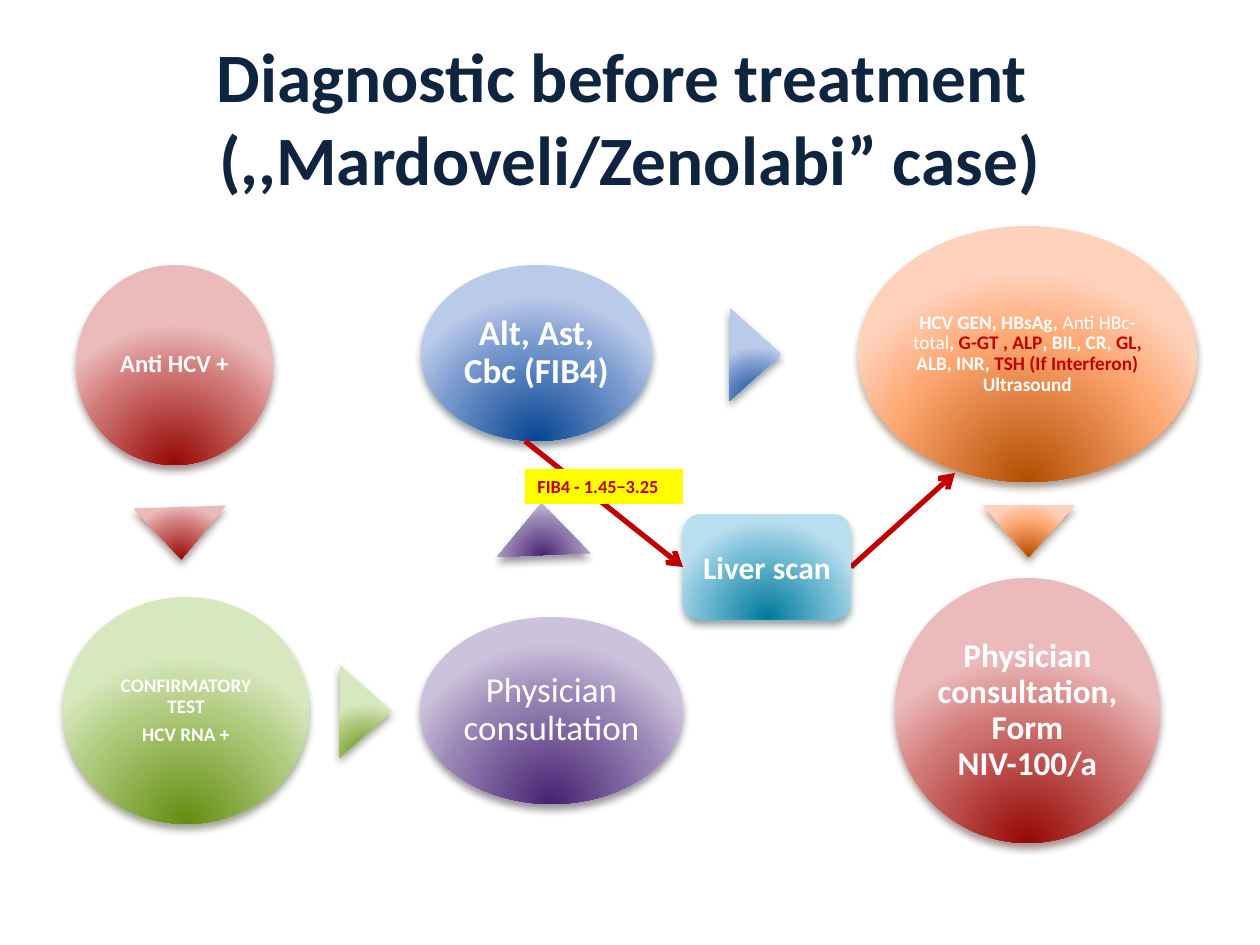
"""Build the slide showing the diagnostic pathway before treatment."""
from lxml.etree import SubElement
from pptx import Presentation
from pptx.dml.color import RGBColor
from pptx.enum.shapes import MSO_CONNECTOR, MSO_SHAPE as SHAPE
from pptx.enum.text import MSO_ANCHOR as ANCHOR, PP_ALIGN as ALIGN
from pptx.oxml import parse_xml
from pptx.oxml.ns import nsdecls, qn
from pptx.util import Pt

PX = 914400 / 126
T = {
    "font": "Calibri",
    "title": "0F243E", "light": "FFFFFF", "accent": "C00000", "tag": "FFFF00",
    "title_size": 39.6, "large": 20, "form": 19, "box": 18, "medium": 14, "small": 11, "tag_size": 10.5,
    "red": ("960703", "D07977", "EBBABA", "441B1A"),
    "green": ("638D0F", "AFCB7E", "D6E8BD", "37421E"),
    "purple": ("462272", "9A86B6", "CCC2DB", "2D2339"),
    "blue": ("064493", "799ACE", "BACAE9", "1B2D43"),
    "orange": ("B34E00", "FFA873", "FFD2BD", "583517"),
    "teal": ("00799B", "76BED5", "B9DEEE", "193D47"),
}


def px(*values):
    return [round(v * PX) for v in values]


def write(sp, paragraphs, size, color="light", bold=True, align=ALIGN.CENTER,
          anchor=ANCHOR.MIDDLE, inset=None, line=None, after=0):
    tf = sp.text_frame
    tf.word_wrap = True
    tf.vertical_anchor = anchor
    if inset is not None:
        tf.margin_left = tf.margin_right = tf.margin_top = tf.margin_bottom = px(inset)[0]
    for i, runs in enumerate(paragraphs):
        p = tf.paragraphs[0] if i == 0 else tf.add_paragraph()
        p.alignment = align
        p.space_after = Pt(after)
        if line:
            p.line_spacing = line
        for text, *style in runs:
            if text == "\n":
                p.add_line_break()
                continue
            r = p.add_run()
            r.text = text
            r.font.name = T["font"]
            r.font.size = Pt(T[size])
            r.font.bold = bold and "regular" not in style
            r.font.color.rgb = RGBColor.from_string(T["accent" if "accent" in style else color])


prs = Presentation()
prs.slide_width, prs.slide_height = px(1260, 945)
s = prs.slides.add_slide(prs.slide_layouts[6])

title = s.shapes.add_textbox(*px(63, 38, 1134, 157))
write(title, [[("Diagnostic before treatment ",), ("\n",), ("(,,Mardoveli/Zenolabi” case)",)]],
      "title_size", color="title")

tests = [("HCV GEN, HBsAg, ",), ("Anti HBc-total", "regular"), (", ",), ("G-GT , ALP", "accent"),
         (", BIL, CR, ",), ("GL, ", "accent"), ("ALB, INR, ",),
         ("TSH (If Interferon) ", "accent"), ("Ultrasound",)]
steps = [
    ("red", (76, 265, 197, 200), [[("Anti HCV +",)]], "medium", True),
    ("green", (63, 597, 246, 227), [[("CONFIRMATORY TEST",)], [("HCV RNA +",)]], "small", True),
    ("purple", (420, 617, 263, 187), [[("Physician consultation",)]], "large", False),
    ("blue", (421, 265, 231, 176), [[("Alt, Ast, Cbc (FIB4)",)]], "large", True),
    ("orange", (858, 226, 339, 256), [tests], "small", True),
    ("red", (895, 578, 265, 265), [[("Physician consultation, Form NIV-100/a",)]], "form", True),
]
pointers = [
    ("red", 134, 507, 178.1),
    ("green", 319, 685, 90),
    ("purple", 496, 503, 357.6),
    ("blue", 709, 328, 90),
    ("orange", 982, 505, 180),
]

glossy = []
for hue, box, paragraphs, size, bold in steps:
    sp = s.shapes.add_shape(SHAPE.OVAL, *px(*box))
    write(sp, paragraphs, size, bold=bold, inset=3, line=0.9, after=round(T[size] * 0.35))
    glossy.append((sp, hue))

for hue, left, top, angle in pointers:
    sp = s.shapes.add_shape(SHAPE.ISOSCELES_TRIANGLE, *px(left, top, 93, 52))
    sp.rotation = angle
    glossy.append((sp, hue))

arrows = [s.shapes.add_connector(MSO_CONNECTOR.STRAIGHT, *px(*ends))
          for ends in ((525, 441, 683, 567), (851, 567, 955, 473))]
for arrow in arrows:
    arrow.line.color.rgb = RGBColor.from_string(T["accent"])
    arrow.line.width = Pt(3)
    SubElement(arrow._element.spPr.find(qn("a:ln")), qn("a:tailEnd"), type="arrow")
    SubElement(arrow._element.spPr, qn("a:effectLst"))

liver_scan = s.shapes.add_shape(SHAPE.ROUNDED_RECTANGLE, *px(683, 514, 168, 105))
write(liver_scan, [[("Liver scan",)]], "box")
glossy.append((liver_scan, "teal"))

for sp, hue in glossy:
    dark, middle, pale, shade = T[hue]
    stops = "".join(f'<a:gs pos="{pos}000"><a:srgbClr val="{color}"/></a:gs>'
                    for pos, color in ((0, dark), (68, middle), (100, pale)))
    sp.line.fill.background()
    sp.shadow.inherit = False
    sp.fill.background()
    spPr = sp._element.spPr
    spPr.replace(spPr.find(qn("a:noFill")), parse_xml(
        f'<a:gradFill {nsdecls("a")} rotWithShape="1"><a:gsLst>{stops}</a:gsLst><a:path path="circle">'
        '<a:fillToRect l="50000" t="130000" r="50000" b="-30000"/></a:path></a:gradFill>'))
    spPr.find(qn("a:effectLst")).append(parse_xml(
        f'<a:outerShdw {nsdecls("a")} blurRad="{Pt(4.5)}" dist="{Pt(3)}" dir="5400000" rotWithShape="0">'
        f'<a:srgbClr val="{shade}"><a:alpha val="48000"/></a:srgbClr></a:outerShdw>'))

tag = s.shapes.add_shape(SHAPE.RECTANGLE, *px(525, 469, 158, 35))
tag.fill.solid()
tag.fill.fore_color.rgb = RGBColor.from_string(T["tag"])
tag.line.fill.background()
tag.shadow.inherit = False
write(tag, [[("FIB4 - 1.45−3.25",)]], "tag_size", color="accent", align=ALIGN.LEFT, anchor=ANCHOR.TOP)

prs.save("out.pptx")
